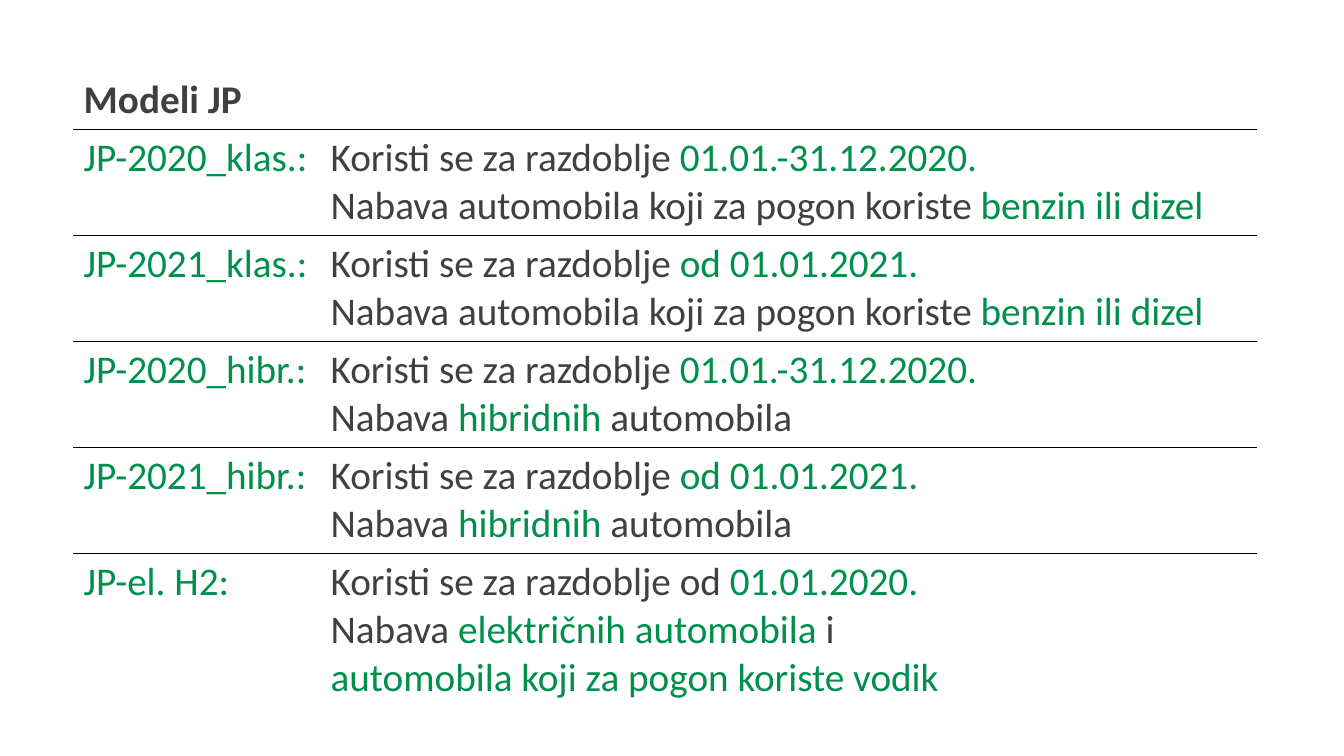
from lxml import etree
from pptx import Presentation
from pptx.dml.color import RGBColor
from pptx.oxml.ns import qn
from pptx.util import Pt

COLORS = {"text": "404040", "accent": "00904C", "rule": "000000", "blank": "FFFFFF"}
COLUMN_WIDTHS = [176.4, 668.2]
ROW_HEIGHTS = [40, 75, 75, 75, 75, 106]

PERIOD_2020 = "Koristi se za razdoblje |01.01.-31.12.2020."
PERIOD_2021 = "Koristi se za razdoblje |od 01.01.2021."
CLASSIC = "Nabava automobila koji za pogon koriste |benzin ili dizel"
HYBRID = "Nabava |hibridnih |automobila"
MODELS = [
    ("JP-2020_klas.:", [PERIOD_2020, CLASSIC]),
    ("JP-2021_klas.:", [PERIOD_2021, CLASSIC]),
    ("JP-2020_hibr.:", [PERIOD_2020, HYBRID]),
    ("JP-2021_hibr.:", [PERIOD_2021, HYBRID]),
    ("JP-el. H2:", [
        "Koristi se za razdoblje od |01.01.2020.",
        "Nabava |električnih automobila |i",
        "|automobila koji za pogon koriste vodik",
    ]),
]


def add_text(paragraph, text, color="text", bold=False, size=28, font="Calibri"):
    run = paragraph.add_run()
    run.text = text
    run.font.name = font
    run.font.size = Pt(size)
    run.font.bold = bold
    run.font.color.rgb = RGBColor.from_string(COLORS[color])


class SlideBuilder:
    def __init__(self, slide):
        self.slide = slide
        self.border_width = Pt(1)

    def add_table(self, left, top, column_widths, row_heights):
        shape = self.slide.shapes.add_table(
            len(row_heights), len(column_widths), Pt(left), Pt(top),
            Pt(sum(column_widths)), Pt(sum(row_heights)))
        table = shape.table
        table.first_row = False
        table.horz_banding = False
        for column, width in zip(table.columns, column_widths):
            column.width = Pt(width)
        for row, height in zip(table.rows, row_heights):
            row.height = Pt(height)
        last = len(row_heights) - 1
        for index, row in enumerate(table.rows):
            for cell in row.cells:
                self.set_borders(cell, {
                    "L": "blank",
                    "R": "blank",
                    "T": "rule" if index > 0 else "blank",
                    "B": "rule" if index < last else "blank",
                })
                cell.fill.background()
        return table

    def set_borders(self, cell, borders):
        properties = cell._tc.get_or_add_tcPr()
        for side, color in borders.items():
            line = etree.SubElement(properties, qn(f"a:ln{side}"), w=str(self.border_width))
            fill = etree.SubElement(line, qn("a:solidFill"))
            etree.SubElement(fill, qn("a:srgbClr"), val=COLORS[color])

    def fill_cell(self, cell, lines, **text_format):
        frame = cell.text_frame
        for index, line in enumerate(lines):
            paragraph = frame.add_paragraph() if index else frame.paragraphs[0]
            for position, part in enumerate(line.split("|")):
                if part:
                    color = "accent" if position % 2 else "text"
                    add_text(paragraph, part, color=color, **text_format)


def main():
    presentation = Presentation()
    presentation.slide_width = Pt(960)
    presentation.slide_height = Pt(540)
    slide = presentation.slides.add_slide(presentation.slide_layouts[6])
    builder = SlideBuilder(slide)
    table = builder.add_table(52.6, 51.1, COLUMN_WIDTHS, ROW_HEIGHTS)
    builder.fill_cell(table.cell(0, 0), ["Modeli JP"], bold=True)
    for row, (model, description) in enumerate(MODELS, start=1):
        builder.fill_cell(table.cell(row, 0), [f"|{model}"])
        builder.fill_cell(table.cell(row, 1), description)
    presentation.save("out.pptx")


if __name__ == "__main__":
    main()
